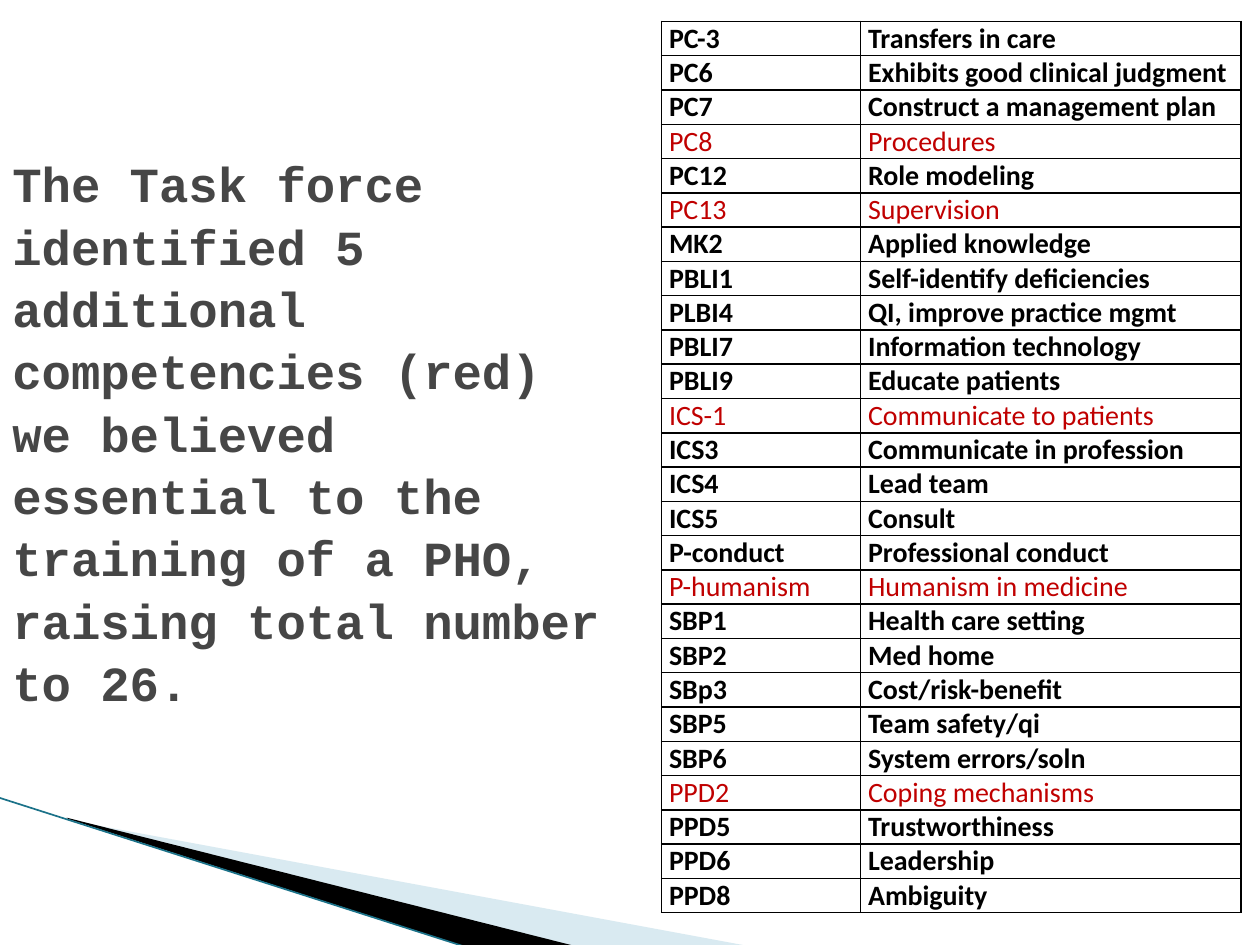
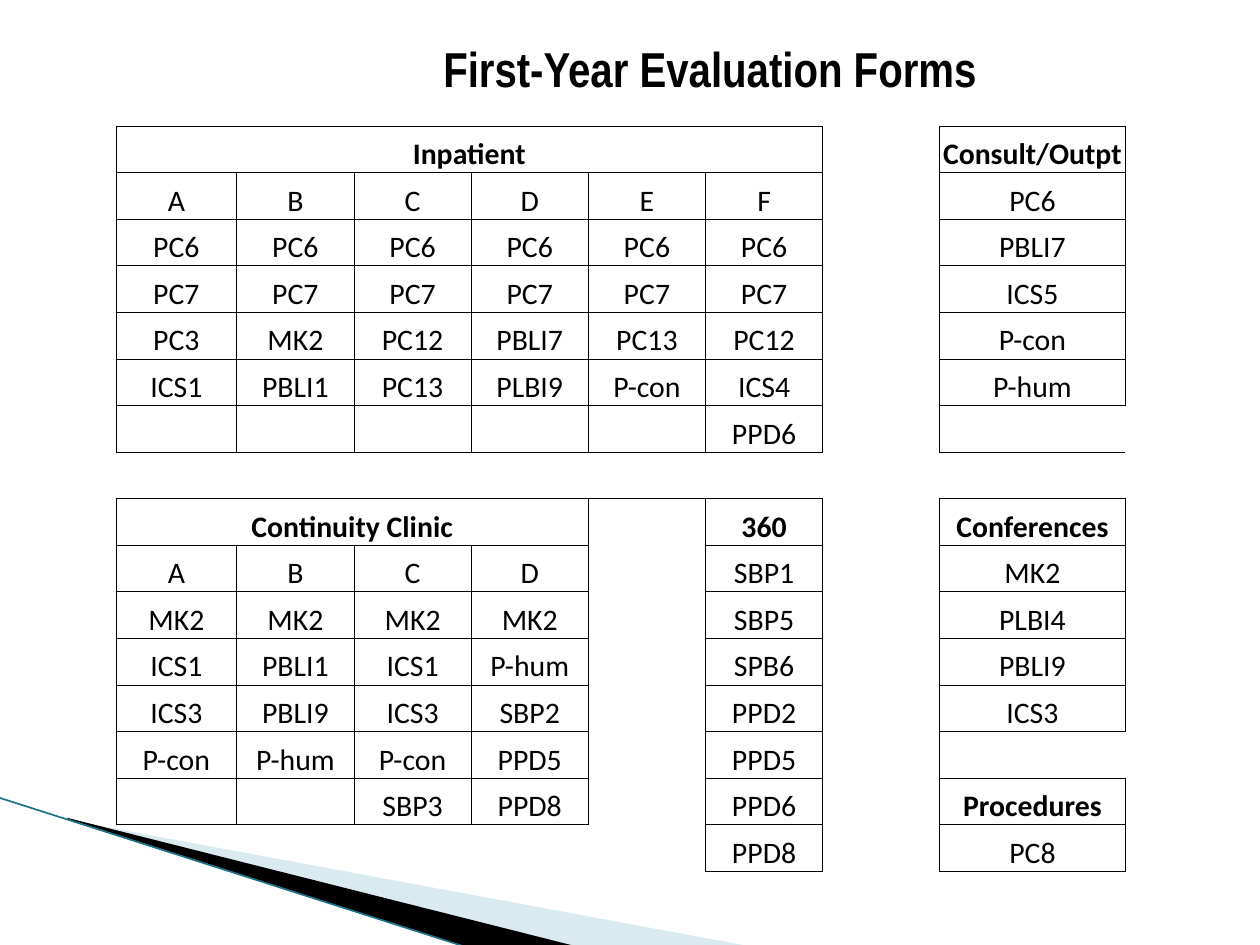
from lxml import etree
from pptx import Presentation
from pptx.dml.color import RGBColor
from pptx.enum.shapes import MSO_CONNECTOR
from pptx.enum.text import MSO_ANCHOR as Anchor, MSO_AUTO_SIZE as AutoSize, PP_ALIGN as Align
from pptx.oxml.ns import qn
from pptx.util import Inches, Pt

BLACK, GREY, RED = "000000", "464646", "C00000"
PALE_BLUE, TEAL = "A0CBDC", "1B7289"
PLAIN_TABLE = "{2D5ABB26-0587-4C30-8999-92F81FD0307C}"
SIDES = {"lnL": (0, -1), "lnR": (0, 1), "lnT": (-1, 0), "lnB": (1, 0)}

COMPETENCIES = [
    ("PC-3", "Transfers in care"),
    ("PC6", "Exhibits good clinical judgment"),
    ("PC7", "Construct a management plan"),
    ("PC8", "Procedures"),
    ("PC12", "Role modeling"),
    ("PC13", "Supervision"),
    ("MK2", "Applied knowledge"),
    ("PBLI1", "Self-identify deficiencies"),
    ("PLBI4", "QI, improve practice mgmt"),
    ("PBLI7", "Information technology"),
    ("PBLI9", "Educate patients"),
    ("ICS-1", "Communicate to patients"),
    ("ICS3", "Communicate in profession"),
    ("ICS4", "Lead team"),
    ("ICS5", "Consult"),
    ("P-conduct", "Professional conduct"),
    ("P-humanism", "Humanism in medicine"),
    ("SBP1", "Health care setting"),
    ("SBP2", "Med home"),
    ("SBp3", "Cost/risk-benefit"),
    ("SBP5", "Team safety/qi"),
    ("SBP6", "System errors/soln"),
    ("PPD2", "Coping mechanisms"),
    ("PPD5", "Trustworthiness"),
    ("PPD6", "Leadership"),
    ("PPD8", "Ambiguity"),
]
ADDED = {"PC8", "PC13", "ICS-1", "P-humanism", "PPD2"}

# Each form: heading, top row, left column, and its columns of entries
FORMS = [
    ("Inpatient", 0, 0, [
        ["A", "PC6", "PC7", "PC3", "ICS1", ""],
        ["B", "PC6", "PC7", "MK2", "PBLI1", ""],
        ["C", "PC6", "PC7", "PC12", "PC13", ""],
        ["D", "PC6", "PC7", "PBLI7", "PLBI9", ""],
        ["E", "PC6", "PC7", "PC13", "P-con", ""],
        ["F", "PC6", "PC7", "PC12", "ICS4", "PPD6"]]),
    ("Consult/Outpt", 0, 7, [["PC6", "PBLI7", "ICS5", "P-con", "P-hum"]]),
    ("Continuity Clinic", 8, 0, [
        ["A", "MK2", "ICS1", "ICS3", "P-con", ""],
        ["B", "MK2", "PBLI1", "PBLI9", "P-hum", ""],
        ["C", "MK2", "ICS1", "ICS3", "P-con", "SBP3"],
        ["D", "MK2", "P-hum", "SBP2", "PPD5", "PPD8"]]),
    ("360", 8, 5, [["SBP1", "SBP5", "SPB6", "PPD2", "PPD5", "PPD6", "PPD8"]]),
    ("Conferences", 8, 7, [["MK2", "PLBI4", "PBLI9", "ICS3"]]),
    ("Procedures", 14, 7, [["PC8"]]),
]


def rgb(color):
    return RGBColor.from_string(color)


class Deck:
    """Holds the presentation, its shared style and the current slide."""

    def __init__(self):
        self.prs = Presentation()
        self.prs.slide_width, self.prs.slide_height = Inches(10), Inches(7.5)
        self.slide = None

    def new_slide(self):
        self.slide = self.prs.slides.add_slide(self.prs.slide_layouts[6])
        self.wedge([(0.55, 6.51), (5.95, 7.51), (4.56, 7.51), (0.55, 6.5)], PALE_BLUE, 40)
        self.wedge([(0.53, 6.49), (4.57, 7.51), (3.72, 7.52), (0.54, 6.5)], BLACK)
        self.line((-0.01, 6.33), (3.71, 7.52), TEAL, 0.95)

    def wedge(self, points, color, opacity=100):
        corners = [(Inches(x), Inches(y)) for x, y in points]
        builder = self.slide.shapes.build_freeform(*corners[0])
        builder.add_line_segments(corners[1:])
        wedge = builder.convert_to_shape()
        wedge.shadow.inherit = False
        wedge.line.fill.background()
        wedge.fill.solid()
        wedge.fill.fore_color.rgb = rgb(color)
        if opacity < 100:
            clr = wedge._element.spPr.find(qn("a:solidFill"))[0]
            etree.SubElement(clr, qn("a:alpha")).set("val", str(opacity * 1000))

    def line(self, start, end, color, width):
        ends = [Inches(v) for v in (*start, *end)]
        edge = self.slide.shapes.add_connector(MSO_CONNECTOR.STRAIGHT, *ends)
        edge.line.color.rgb = rgb(color)
        edge.line.width = Pt(width)
        etree.SubElement(edge._element.spPr, qn("a:effectLst"))

    def style_runs(self, paragraph, font, size, color, bold):
        for run in paragraph.runs:
            run.font.name, run.font.size, run.font.bold = font, Pt(size), bold
            run.font.color.rgb = rgb(color)

    def title(self, text, box, font, color, wrap=True, spacing=1.0):
        frame = self.slide.shapes.add_textbox(*map(Inches, box)).text_frame
        frame.text = text
        frame.word_wrap = wrap
        frame.auto_size = AutoSize.NONE if wrap else AutoSize.SHAPE_TO_FIT_TEXT
        frame.vertical_anchor = Anchor.MIDDLE if wrap else Anchor.TOP
        paragraph = frame.paragraphs[0]
        paragraph.line_spacing = spacing
        self.style_runs(paragraph, font, 28, color, True)

    def table(self, left, top, widths, rows, row_height):
        """Add an unstyled table for rows x len(widths) cells."""
        size = Inches(sum(widths)), Inches(rows * row_height)
        table = self.slide.shapes.add_table(
            rows, len(widths), Inches(left), Inches(top), *size).table
        table._tbl.tblPr.find(qn("a:tableStyleId")).text = PLAIN_TABLE
        table.first_row = table.horz_banding = False
        for column, width in zip(table.columns, widths):
            column.width = Inches(width)
        for row in table.rows:
            row.height = Inches(row_height)
        return table

    def cell(self, cell, text, size, color=BLACK, bold=False, align=Align.LEFT, inset=0.06):
        cell.text = text
        cell.vertical_anchor = Anchor.BOTTOM
        cell.margin_left = cell.margin_right = Inches(inset)
        cell.margin_top = cell.margin_bottom = 0
        cell.fill.background()
        paragraph = cell.text_frame.paragraphs[0]
        paragraph.alignment = align
        self.style_runs(paragraph, "Calibri", size, color, bold)

    def borders(self, table, boxed, width):
        """Rule every side that touches a (row, column) listed in boxed."""
        for r in range(len(table.rows)):
            for c in range(len(table.columns)):
                props = table.cell(r, c)._tc.get_or_add_tcPr()
                ruled = [tag for tag, (dr, dc) in SIDES.items()
                         if (r, c) in boxed or (r + dr, c + dc) in boxed]
                for place, tag in enumerate(ruled):
                    rule = etree.Element(qn("a:" + tag), w=str(Pt(width)))
                    fill = etree.SubElement(rule, qn("a:solidFill"))
                    etree.SubElement(fill, qn("a:srgbClr"), val=BLACK)
                    props.insert(place, rule)


def competencies_slide(deck):
    deck.new_slide()
    deck.title("The Task force identified 5 additional competencies (red) we believed "
               "essential to the training of a PHO, raising total number to 26.",
               (0, 2.17, 5, 2.5), "Courier New", GREY, spacing=1.06)
    table = deck.table(5.25, 0.17, [1.58, 3.02], len(COMPETENCIES), 0.27)
    boxed = set()
    for r, entry in enumerate(COMPETENCIES):
        added = entry[0] in ADDED
        for c, text in enumerate(entry):
            deck.cell(table.cell(r, c), text, 16, RED if added else BLACK, not added)
            boxed.add((r, c))
    deck.borders(table, boxed, 1)


def forms_slide(deck):
    deck.new_slide()
    table = deck.table(0.92, 1, [0.96] + [0.93] * 6 + [1.47], 16, 0.37)
    texts, headings = {}, set()
    for heading, top, left, columns in FORMS:
        headings.add((top, left))
        for c, entries in enumerate(columns, left):
            first = heading if c == left else ""
            for r, text in enumerate([first, *entries], top):
                texts[r, c] = text
    for r in range(16):
        for c in range(8):
            deck.cell(table.cell(r, c), texts.get((r, c), ""), 17,
                      bold=(r, c) in headings, align=Align.CENTER, inset=0.01)
    deck.borders(table, texts, 0.5)
    for _, top, left, columns in FORMS:
        if len(columns) > 1:
            table.cell(top, left).merge(table.cell(top, left + len(columns) - 1))
    deck.title("First-Year Evaluation Forms", (3.42, 0.26, 4.47, 0.57),
               "Arial Narrow", BLACK, wrap=False)


def main():
    deck = Deck()
    competencies_slide(deck)
    forms_slide(deck)
    deck.prs.save("out.pptx")


if __name__ == "__main__":
    main()
